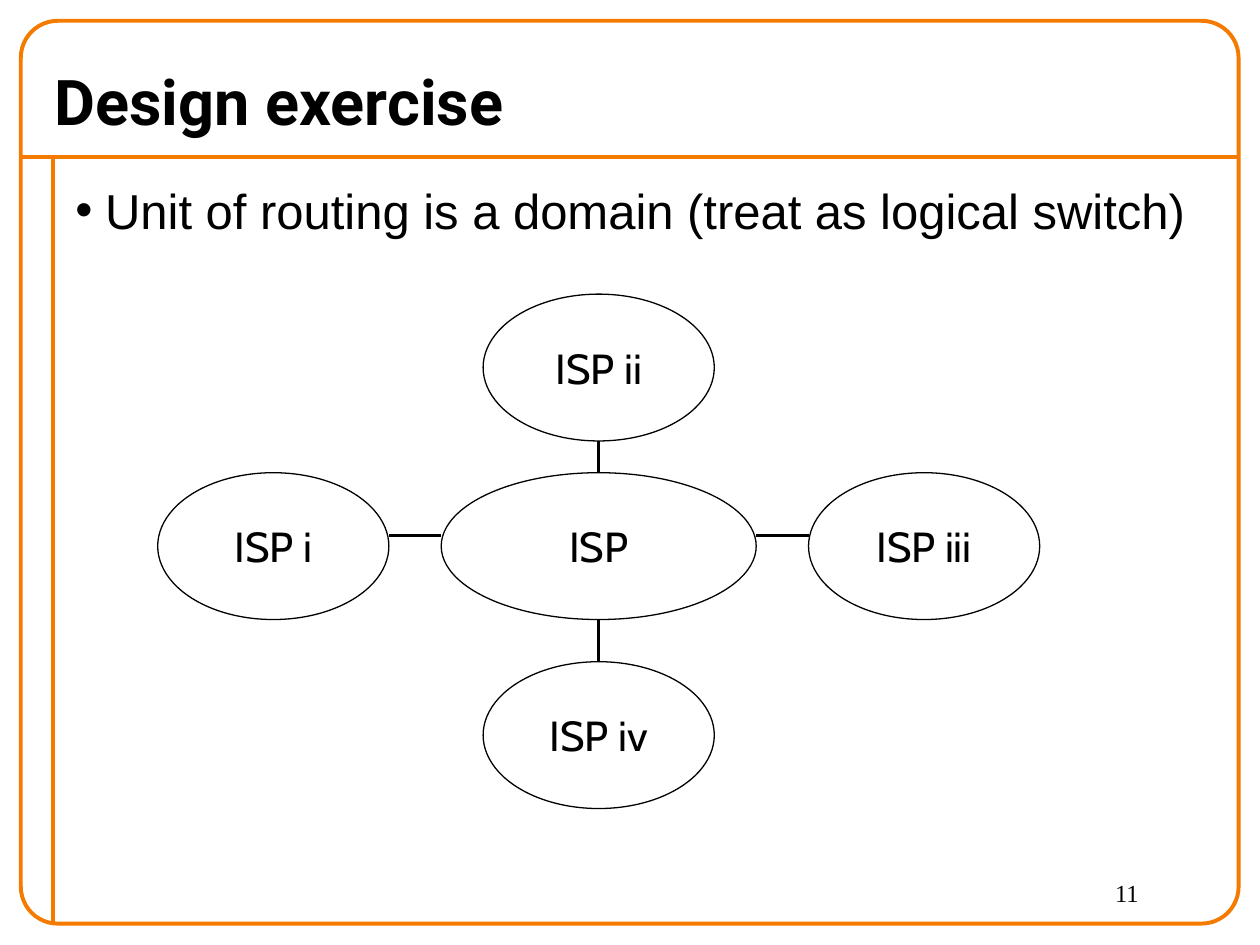
from dataclasses import dataclass

from lxml import etree
from pptx import Presentation
from pptx.dml.color import RGBColor
from pptx.enum.shapes import MSO_CONNECTOR, MSO_SHAPE
from pptx.enum.text import MSO_ANCHOR, PP_ALIGN
from pptx.oxml.ns import qn
from pptx.util import Cm, Pt

ORANGE = RGBColor(0xF4, 0x7A, 0x00)
BLACK = RGBColor(0, 0, 0)
WHITE = RGBColor(0xFF, 0xFF, 0xFF)

STRAIGHT = MSO_CONNECTOR.STRAIGHT
ROUNDED = MSO_SHAPE.ROUNDED_RECTANGLE
OVAL = MSO_SHAPE.OVAL
TOP, MIDDLE = MSO_ANCHOR.TOP, MSO_ANCHOR.MIDDLE
LEFT, CENTER = PP_ALIGN.LEFT, PP_ALIGN.CENTER


@dataclass
class Box:
    """An area of the page, in centimetres."""
    left: float
    top: float
    width: float
    height: float

    def emu(self):
        return Cm(self.left), Cm(self.top), Cm(self.width), Cm(self.height)


def add_line(page, start, end, color, weight):
    line = page.shapes.add_connector(STRAIGHT, *map(Cm, start + end))
    line.line.color.rgb = color
    line.line.width = Pt(weight)
    etree.SubElement(line._element.spPr, qn("a:effectLst"))


def write(frame, text, font, size, bold=False, anchor=TOP, align=LEFT):
    frame.vertical_anchor = anchor
    para = frame.paragraphs[0]
    para.alignment = align
    span = para.add_run()
    span.text = text
    span.font.name = font
    span.font.size = Pt(size)
    span.font.bold = bold
    span.font.color.rgb = BLACK
    return para


def add_text(page, box, *args, **options):
    frame = page.shapes.add_textbox(*box.emu()).text_frame
    frame.word_wrap = True
    write(frame, *args, **options)
    return frame


def add_frame(page, box):
    # Rules under the title and along the left margin
    rule_y, margin_x = box.top + 2.75, box.left + 0.64
    right, bottom = box.left + box.width, box.top + box.height
    add_line(page, (box.left, rule_y), (right, rule_y), ORANGE, 2.25)
    add_line(page, (margin_x, rule_y), (margin_x, bottom), ORANGE, 2.25)

    # Rounded border
    border = page.shapes.add_shape(ROUNDED, *box.emu())
    border.adjustments[0] = 0.041
    border.shadow.inherit = False
    border.fill.background()
    border.line.color.rgb = ORANGE
    border.line.width = Pt(2.25)


def add_bullet(page, box, text):
    frame = add_text(page, box, text, "Arial", 28)
    frame.margin_top = Cm(0.25)
    props = frame.paragraphs[0]._p.get_or_add_pPr()
    props.set("marL", str(Cm(0.6)))
    props.set("indent", str(-Cm(0.6)))
    etree.SubElement(props, qn("a:buFont"), typeface="Arial")
    etree.SubElement(props, qn("a:buChar"), char="•")


def add_domain(page, box, name):
    oval = page.shapes.add_shape(OVAL, *box.emu())
    oval.shadow.inherit = False
    oval.fill.solid()
    oval.fill.fore_color.rgb = WHITE
    oval.line.color.rgb = BLACK
    oval.line.width = Pt(0.75)
    oval.text_frame.word_wrap = False
    write(oval.text_frame, name, "Cabin", 24, anchor=MIDDLE, align=CENTER)


def add_network(page, box):
    hub_width, peer_width, height = 6.35, 4.66, 2.96
    center_x = box.left + box.width / 2
    center_y = box.top + 5.08
    side_y = center_y - 0.21  # side links run just above the middle

    # Domains: name, offset of the centre from the hub, width
    domains = [
        ("ISP", 0, 0, hub_width),
        ("ISP iv", 0, 3.81, peer_width),
        ("ISP i", -6.56, 0, peer_width),
        ("ISP iii", 6.56, 0, peer_width),
        ("ISP ii", 0, -3.6, peer_width),
    ]
    for name, dx, dy, width in domains:
        add_domain(page, Box(center_x + dx - width / 2,
                             center_y + dy - height / 2, width, height), name)

    # Links from the edge of the hub to the edge of each peer
    for _, dx, dy, _ in domains[1:]:
        if dx:
            side = 1 if dx > 0 else -1
            start = (center_x + side * hub_width / 2, side_y)
            end = (center_x + dx - side * peer_width / 2, side_y)
        else:
            side = 1 if dy > 0 else -1
            start = (center_x, center_y + side * height / 2)
            end = (center_x, center_y + dy - side * height / 2)
        add_line(page, start, end, BLACK, 1.5)


def main():
    deck = Presentation()
    deck.slide_width, deck.slide_height = Cm(25.4), Cm(19.05)
    page = deck.slides.add_slide(deck.slide_layouts[6])

    add_frame(page, Box(0.42, 0.42, 24.55, 18.2))
    add_text(page, Box(0.85, 1.06, 24.55, 1.91), "Design exercise",
             "Roboto", 36, bold=True, anchor=MIDDLE)
    add_bullet(page, Box(1.27, 3.39, 23.5, 15.24),
               "Unit of routing is a domain (treat as logical switch)")
    add_text(page, Box(22.23, 17.57, 2.54, 1.06), "11", "Times New Roman", 14)
    add_network(page, Box(3.18, 5.93, 17.78, 10.37))

    deck.save("out.pptx")


if __name__ == "__main__":
    main()
